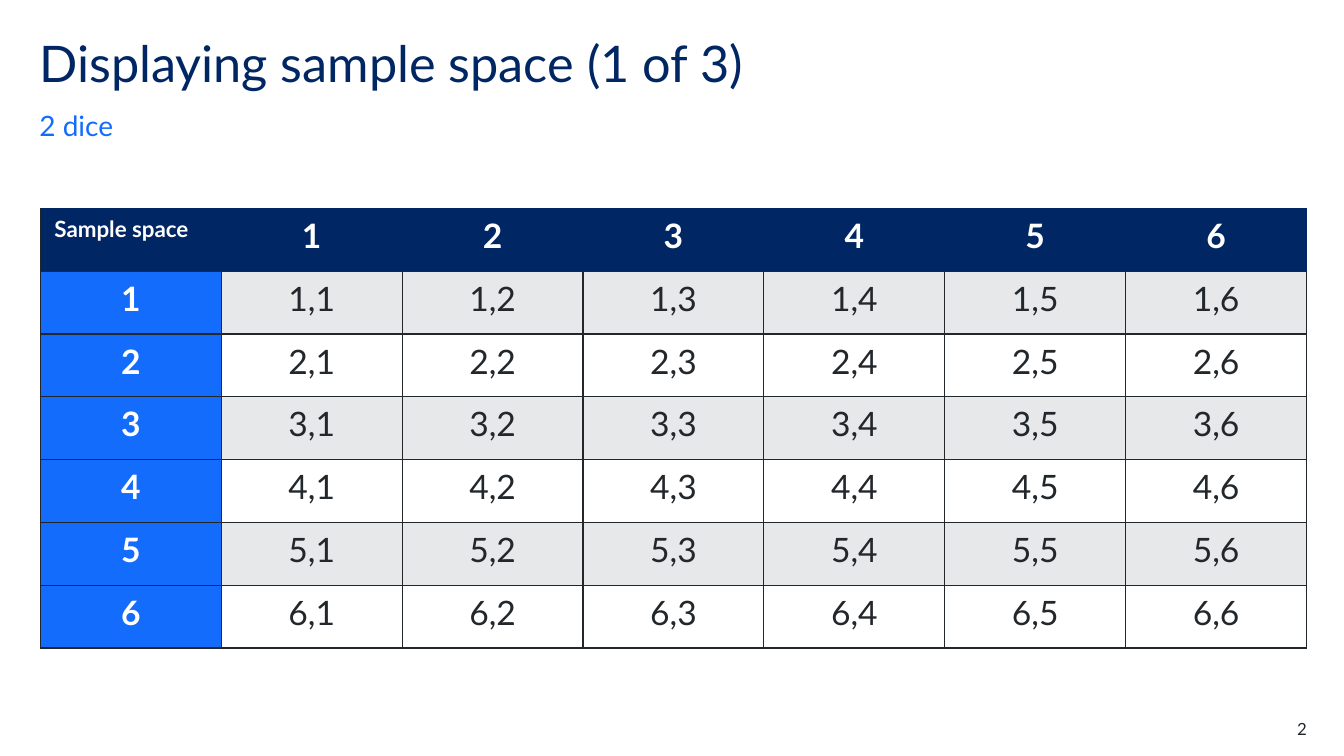
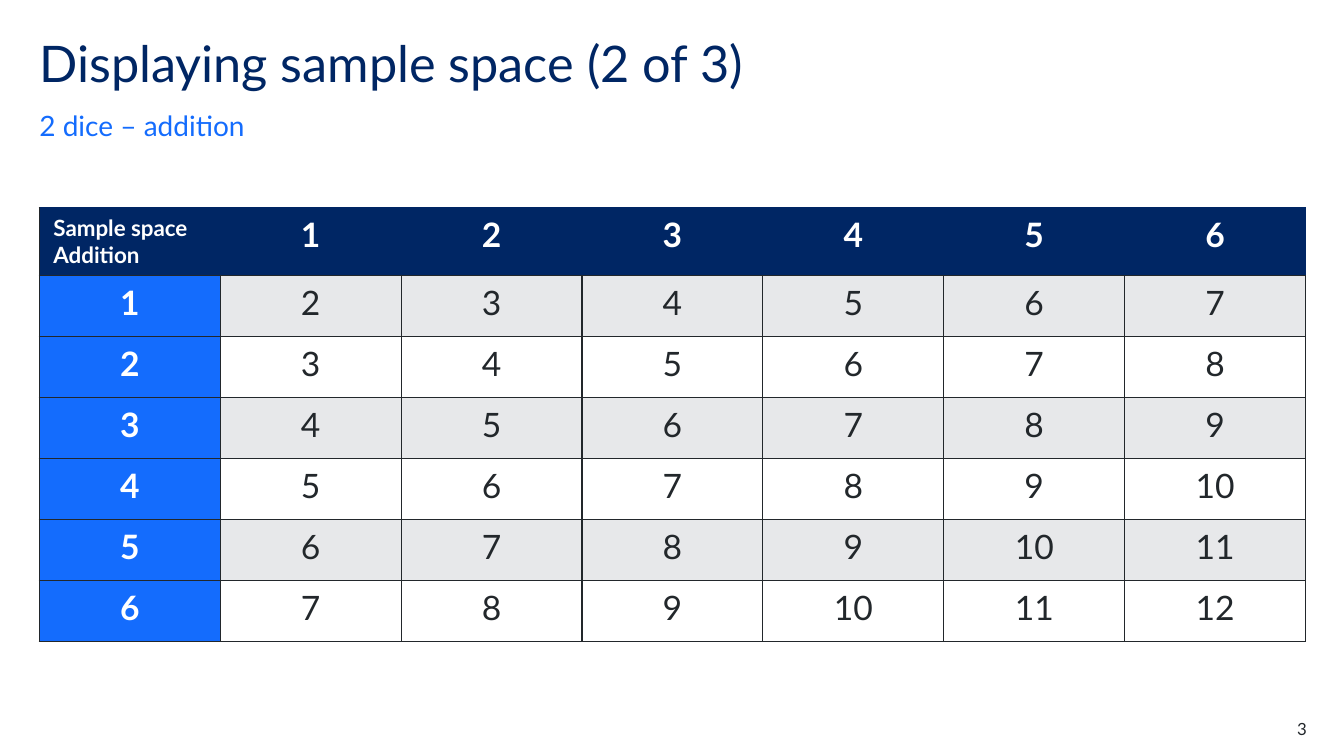
"""Build two slides that show the sample space of two dice as tables."""
from lxml import etree
from pptx import Presentation
from pptx.dml.color import RGBColor
from pptx.enum.text import MSO_ANCHOR, PP_ALIGN
from pptx.oxml.ns import qn
from pptx.util import Inches, Pt

NAVY = RGBColor(0x00, 0x26, 0x64)
BLUE = RGBColor(0x14, 0x6C, 0xFD)
INK = RGBColor(0x22, 0x27, 0x2B)
GREY = RGBColor(0xE7, 0xE8, 0xEA)
WHITE = RGBColor(0xFF, 0xFF, 0xFF)
LEFT, CENTER, RIGHT = PP_ALIGN.LEFT, PP_ALIGN.CENTER, PP_ALIGN.RIGHT
TOP, BOTTOM = MSO_ANCHOR.TOP, MSO_ANCHOR.BOTTOM
FONT_NAME = "Lato"

SLIDE_WIDTH, SLIDE_HEIGHT = 13.33, 7.5
MARGIN = 0.39
TITLE_WIDTH = 11.02
NUMBER_WIDTH = 0.79
TABLE_WIDTH = 12.56
FACES = range(1, 7)
GRID_SIZE = len(FACES) + 1
CELL_MARGINS = {
    "margin_left": Inches(0.14), "margin_right": Inches(0.14),
    "margin_top": Inches(0.07), "margin_bottom": Inches(0.07),
}

TITLE = {
    "place": (MARGIN, 0.39, TITLE_WIDTH, 0.6), "anchor": TOP,
    "size": 36, "color": NAVY,
    "paragraph": {"alignment": LEFT, "line_spacing": 0.9},
}
SUBTITLE = {
    "place": (MARGIN, 1.07, TITLE_WIDTH, 0.34), "anchor": BOTTOM,
    "size": 20, "color": BLUE,
    "paragraph": {"alignment": LEFT, "line_spacing": 1.5, "space_after": Pt(12)},
}
NUMBER = {
    "place": (SLIDE_WIDTH - MARGIN - NUMBER_WIDTH + 0.02, 7.13, NUMBER_WIDTH, 0.2),
    "anchor": TOP, "size": 12, "color": INK,
    "paragraph": {"alignment": RIGHT},
}

PAGES = [
    {
        "title": "Displaying sample space (1 of 3)",
        "subtitle": "2 dice",
        "number": "2",
        "corner": "Sample space",
        "outcomes": [[f"{first},{second}" for second in FACES] for first in FACES],
        "table_at": (0.4, 2.07), "table_height": 4.36, "header_height": 0.62,
    },
    {
        "title": "Displaying sample space (2 of 3)",
        "subtitle": "2 dice – addition",
        "number": "3",
        "corner": "Sample space Addition",
        "outcomes": [[str(first + second) for second in FACES] for first in FACES],
        "table_at": (0.39, 2.06), "table_height": 4.3, "header_height": 0.67,
    },
]


def write_text(frame, text, size, color, bold=False, **paragraph_format):
    para = frame.paragraphs[0]
    for name, value in paragraph_format.items():
        setattr(para, name, value)
    span = para.add_run()
    span.text = text
    font_format = {"name": FONT_NAME, "size": Pt(size), "bold": bold}
    for name, value in font_format.items():
        setattr(span.font, name, value)
    span.font.color.rgb = color


def draw_borders(cell, colors):
    properties = cell._tc.get_or_add_tcPr()
    for side in "LRTB":
        line = etree.SubElement(properties, qn(f"a:ln{side}"), w=str(Pt(1)))
        fill = etree.SubElement(line, qn("a:solidFill"))
        etree.SubElement(fill, qn("a:srgbClr"), val=str(colors[side]))


deck = Presentation()
deck.slide_width = Inches(SLIDE_WIDTH)
deck.slide_height = Inches(SLIDE_HEIGHT)
blank_layout = deck.slide_layouts[6]

for page in PAGES:
    slide = deck.slides.add_slide(blank_layout)

    labels = [(page["title"], TITLE), (page["subtitle"], SUBTITLE), (page["number"], NUMBER)]
    for text, style in labels:
        box = slide.shapes.add_textbox(*map(Inches, style["place"]))
        frame_format = {
            "word_wrap": True, "vertical_anchor": style["anchor"],
            "margin_left": 0, "margin_right": 0, "margin_top": 0, "margin_bottom": 0,
        }
        for name, value in frame_format.items():
            setattr(box.text_frame, name, value)
        write_text(box.text_frame, text, style["size"], style["color"], **style["paragraph"])

    left, top = page["table_at"]
    table = slide.shapes.add_table(
        GRID_SIZE, GRID_SIZE, Inches(left), Inches(top),
        Inches(TABLE_WIDTH), Inches(page["table_height"]),
    ).table
    table.horz_banding = False
    for column in table.columns:
        column.width = Inches(TABLE_WIDTH / GRID_SIZE)
    body_height = (page["table_height"] - page["header_height"]) / len(FACES)
    for index, row in enumerate(table.rows):
        row.height = Inches(body_height if index else page["header_height"])

    header = [page["corner"], *map(str, FACES)]
    body = [[str(face), *outcomes] for face, outcomes in zip(FACES, page["outcomes"])]
    for row_index, texts in enumerate([header, *body]):
        for column_index, text in enumerate(texts):
            cell = table.cell(row_index, column_index)
            is_header, is_side = row_index == 0, column_index == 0
            is_label, is_corner = is_header or is_side, is_header and is_side
            for name, value in CELL_MARGINS.items():
                setattr(cell, name, value)

            borders = dict.fromkeys("LRTB", INK)
            if is_header:
                borders.update(L=INK if is_corner else NAVY, R=NAVY, T=NAVY)
            draw_borders(cell, borders)

            band = GREY if row_index % 2 else WHITE
            cell.fill.solid()
            cell.fill.fore_color.rgb = NAVY if is_header else BLUE if is_side else band
            write_text(
                cell.text_frame, text, 16 if is_corner else 24,
                WHITE if is_label else INK, bold=is_label,
                alignment=LEFT if is_corner else CENTER,
            )

deck.save("out.pptx")
